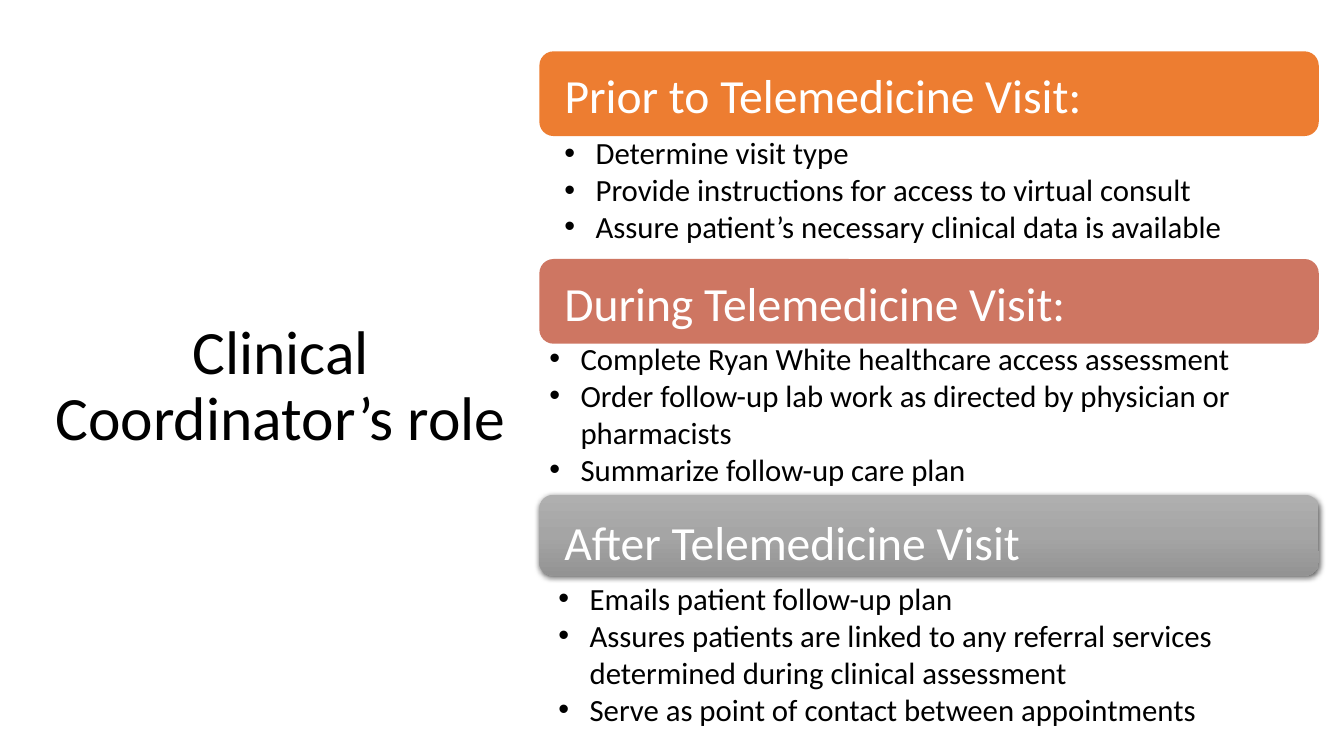
from dataclasses import dataclass

from lxml.etree import SubElement
from pptx import Presentation
from pptx.dml.color import RGBColor as RGB
from pptx.enum.shapes import MSO_SHAPE as SHAPE
from pptx.enum.text import MSO_ANCHOR as ANCHOR, MSO_AUTO_SIZE as FIT
from pptx.oxml.ns import qn
from pptx.util import Inches, Pt


@dataclass(frozen=True)
class Theme:
    font: str = "Calibri"
    ink: str = "000000"
    paper: str = "FFFFFF"
    prior: str = "ED7D31"
    during: str = "CE7662"
    after: tuple = ("AFAFAF", "A5A5A5", "939393")
    title: int = 44
    heading: int = 34
    item: int = 22


T = Theme()
TITLE_BOX = (0.44, 3.12, 4.69, 1.45)
BAR_LEFT, BAR_WIDTH = 5.35, 7.73
HANG = 0.31

STAGES = [
    {"heading": "Prior to Telemedicine Visit:", "fill": T.prior,
     "bar": (0.51, 0.84), "drop": 0.16, "list": (5.5, 1.28, 1.21),
     "items": ["Determine visit type",
               "Provide instructions for access to virtual consult",
               "Assure patient’s necessary clinical data is available"]},
    {"heading": "During Telemedicine Visit:", "fill": T.during,
     "bar": (2.57, 0.84), "drop": 0.16, "list": (5.35, 3.32, 1.58),
     "items": ["Complete Ryan White healthcare access assessment",
               "Order follow-up lab work as directed by physician or pharmacists",
               "Summarize follow-up care plan"]},
    {"heading": "After Telemedicine Visit", "fill": T.after,
     "bar": (4.91, 0.8), "drop": 0.19, "list": (5.44, 5.7, 1.58),
     "items": ["Emails patient follow-up plan",
               "Assures patients are linked to any referral services "
               "determined during clinical assessment",
               "Serve as point of contact between appointments"]},
]


def place(sp, box):
    for name, value in zip(("left", "top", "width", "height"), box):
        setattr(sp, name, Inches(value))


def write(sp, lines, size, color, anchor=ANCHOR.TOP, bullet=False, **spacing):
    tf = sp.text_frame
    frame = {"word_wrap": True, "auto_size": FIT.NONE, "vertical_anchor": anchor}
    for name, value in frame.items():
        setattr(tf, name, value)
    for i, line in enumerate(lines):
        p = tf.add_paragraph() if i else tf.paragraphs[0]
        r = p.add_run()
        r.text = line
        for name, value in {"name": T.font, "size": Pt(size)}.items():
            setattr(r.font, name, value)
        r.font.color.rgb = RGB.from_string(color)
        for name, value in spacing.items():
            setattr(p, name, value)
        pPr = p._p.get_or_add_pPr()
        hang = Inches(HANG) if bullet else 0
        pPr.set("marL", str(hang))
        pPr.set("indent", str(-hang))
        if bullet:
            SubElement(pPr, qn("a:buFont"), typeface="Arial")
            SubElement(pPr, qn("a:buChar"), char="•")
        else:
            SubElement(pPr, qn("a:buNone"))


def shade(sp, colors):
    sp.fill.gradient()
    sp.fill.gradient_angle = 270
    stops = sp._element.spPr.find(qn("a:gradFill")).find(qn("a:gsLst"))
    for stop in list(stops):
        stops.remove(stop)
    for i, color in enumerate(colors):
        stop = SubElement(stops, qn("a:gs"), pos=str(i * 100000 // (len(colors) - 1)))
        SubElement(stop, qn("a:srgbClr"), val=color)
    effects = sp._element.spPr.find(qn("a:effectLst"))
    shadow = SubElement(effects, qn("a:outerShdw"), blurRad=str(Pt(4.5)),
                        dist=str(Pt(1.5)), dir="5400000", rotWithShape="0")
    black = SubElement(shadow, qn("a:srgbClr"), val=T.ink)
    SubElement(black, qn("a:alpha"), val="63000")


def add_bar(s, box, fill):
    sp = s.shapes.add_shape(SHAPE.ROUNDED_RECTANGLE, *map(Inches, box))
    sp.shadow.inherit = False
    sp.line.fill.background()
    if isinstance(fill, tuple):
        shade(sp, fill)
    else:
        sp.fill.solid()
        sp.fill.fore_color.rgb = RGB.from_string(fill)


def add_title(s, box):
    sp = s.shapes.title
    place(sp, box)
    write(sp, ["Clinical Coordinator’s role"], T.title, T.ink,
          anchor=ANCHOR.MIDDLE, line_spacing=0.9)


def add_stage(s, box, stage, heading=None):
    left, top, width, height = box
    add_bar(s, box, stage["fill"])
    heading = heading or s.shapes.add_textbox(0, 0, 0, 0)
    s.shapes._spTree.append(heading._element)
    place(heading, (left + 0.15, top + stage["drop"], 5.9, height - 0.1))
    write(heading, [stage["heading"]], T.heading, T.paper,
          line_spacing=0.9, space_before=Pt(10))
    x, y, h = stage["list"]
    items = s.shapes.add_textbox(*map(Inches, (x, y, width, h)))
    write(items, stage["items"], T.item, T.ink, bullet=True)


def main():
    prs = Presentation()
    prs.slide_width, prs.slide_height = Inches(13.33), Inches(7.5)
    s = prs.slides.add_slide(prs.slide_layouts[1])
    add_title(s, TITLE_BOX)
    headings = [s.placeholders[1], None, None]
    for stage, heading in zip(STAGES, headings):
        top, height = stage["bar"]
        add_stage(s, (BAR_LEFT, top, BAR_WIDTH, height), stage, heading)
    prs.save("out.pptx")


if __name__ == "__main__":
    main()
